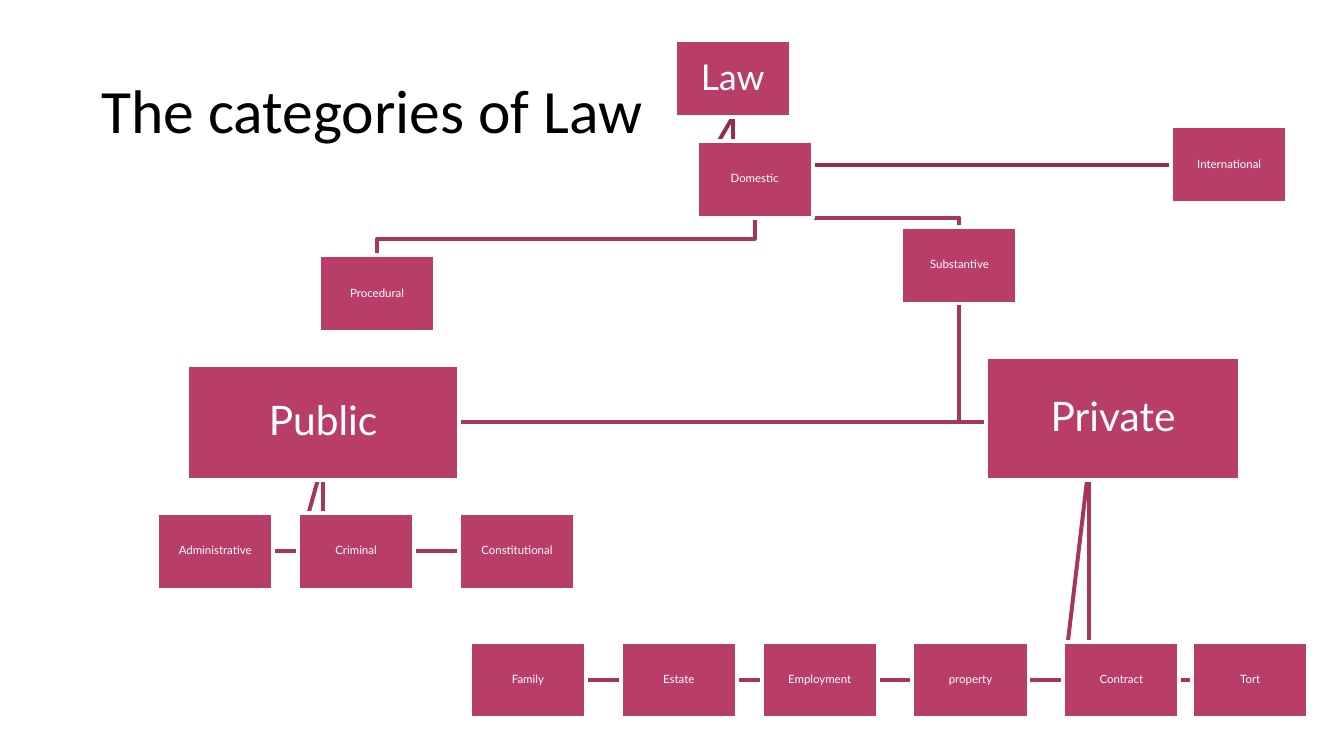
from dataclasses import dataclass

from lxml import etree
from pptx import Presentation
from pptx.dml.color import RGBColor
from pptx.enum.shapes import MSO_CONNECTOR, MSO_SHAPE
from pptx.enum.text import MSO_ANCHOR, PP_ALIGN
from pptx.oxml.ns import qn
from pptx.util import Pt

STRAIGHT = MSO_CONNECTOR.STRAIGHT
RECTANGLE = MSO_SHAPE.RECTANGLE
MIDDLE = MSO_ANCHOR.MIDDLE
CENTER = PP_ALIGN.CENTER
BOTTOM_SITE, LEFT_SITE = 2, 1
BLANK_LAYOUT = 6


@dataclass(frozen=True)
class Theme:
    title_font: str = "Calibri"
    box_font: str = "Lato"
    title_color: RGBColor = RGBColor(0, 0, 0)
    box_fill: RGBColor = RGBColor(0xB8, 0x3D, 0x68)
    box_text: RGBColor = RGBColor(0xFF, 0xFF, 0xFF)
    root_link: RGBColor = RGBColor(0x92, 0x2F, 0x51)
    link: RGBColor = RGBColor(0xA6, 0x36, 0x5E)
    title_size: float = 48.5
    root_size: float = 28
    branch_size: float = 32
    leaf_size: float = 9
    line_width: float = 3.15
    line_spacing: float = 0.9


@dataclass(frozen=True)
class Box:
    left: float
    top: float
    width: float = 91.4
    height: float = 60.5

    @property
    def right(self):
        return self.left + self.width

    @property
    def bottom(self):
        return self.top + self.height

    @property
    def center_x(self):
        return self.left + self.width / 2

    @property
    def center_y(self):
        return self.top + self.height / 2


THEME = Theme()
SLIDE = Box(0, 0, 1058.4, 595.44)
TITLE = Box(72.7, 31.7, 913, 115.2)
ROOT = "Law"
LINK_DROP = 13

SUBJECTS_TOP, PUBLIC_TOP = 505.4, 403.9
CELLS = {
    ROOT: Box(531.4, 31.7),
    "Domestic": Box(548.6, 110.9),
    "Procedural": Box(251.3, 200.9),
    "Substantive": Box(709.9, 178.6),
    "Public": Box(208.8, 302.4),
    "Constitutional": Box(361.4, PUBLIC_TOP),
    "Criminal": Box(234.7, PUBLIC_TOP),
    "Administrative": Box(123.8, PUBLIC_TOP),
    "Private": Box(812.2, 302.4),
    "Family": Box(370.1, SUBJECTS_TOP),
    "Estate": Box(488.9, SUBJECTS_TOP),
    "Employment": Box(599.8, SUBJECTS_TOP),
    "property": Box(718.6, SUBJECTS_TOP),
    "Contract": Box(837.4, SUBJECTS_TOP),
    "Tort": Box(938.9, SUBJECTS_TOP),
    "International": Box(922.3, 99.4),
}
# Branches drawn larger than the cell their links are measured from.
ENLARGED = {
    "Public": Box(147.4, 287.3, 214.2, 90.7),
    "Private": Box(776.9, 280.8, 199.4, 97.2),
}
SIDE_CHILDREN = {
    ROOT: ["International", "Domestic"],
    "Substantive": ["Private", "Public"],
    "Public": ["Administrative", "Criminal", "Constitutional"],
    "Private": ["Tort", "Contract", "property", "Employment", "Estate", "Family"],
}
TOP_CHILDREN = {"Domestic": ["Substantive", "Procedural"]}


def set_text(shape, text, font, size, color):
    frame = shape.text_frame
    frame.word_wrap = True
    frame.vertical_anchor = MIDDLE
    frame.text = text
    paragraph = frame.paragraphs[0]
    paragraph.line_spacing = THEME.line_spacing
    style = paragraph.runs[0].font
    style.name, style.size = font, Pt(size)
    style.color.rgb = color
    return paragraph


def add_title(slide, box, text):
    title = slide.shapes.add_textbox(
        Pt(box.left), Pt(box.top), Pt(box.width), Pt(box.height))
    set_text(title, text, THEME.title_font, THEME.title_size, THEME.title_color)


def add_category(slide, box, name):
    category = slide.shapes.add_shape(
        RECTANGLE, Pt(box.left), Pt(box.top), Pt(box.width), Pt(box.height))
    category.shadow.inherit = False
    category.fill.solid()
    category.fill.fore_color.rgb = THEME.box_fill
    category.line.color.rgb = THEME.box_text
    category.line.width = Pt(THEME.line_width)
    size = THEME.branch_size if name in ENLARGED else THEME.leaf_size
    if name == ROOT:
        size = THEME.root_size
    paragraph = set_text(category, name, THEME.box_font, size, THEME.box_text)
    paragraph.alignment = CENTER
    paragraph.space_after = Pt(4)
    frame = category.text_frame
    frame.margin_left = frame.margin_right = Pt(0.7)
    frame.margin_top = frame.margin_bottom = Pt(0.7)
    return category


def side_route(parent, child):
    """Go down from the parent, then across to the child's nearer side."""
    start = (parent.center_x, parent.bottom)
    to_right = child.center_x > parent.center_x
    end = (child.left if to_right else child.right, child.center_y)
    if child.left < parent.center_x < child.right:
        return [start, end]
    return [start, (parent.center_x, child.center_y), end]


def top_route(parent, child):
    """Go down from the parent, across, then down to the child's top."""
    turn = max(parent.bottom, child.top - LINK_DROP)
    points = [(parent.center_x, parent.bottom), (parent.center_x, turn),
              (child.center_x, turn), (child.center_x, child.top)]
    return list(dict.fromkeys(points))


def add_link(slide, categories, parent, child, route):
    points = [(Pt(x), Pt(y)) for x, y in route(CELLS[parent], CELLS[child])]
    if len(points) == 2:
        link = slide.shapes.add_connector(STRAIGHT, *points[0], *points[1])
        if parent not in ENLARGED:
            link.begin_connect(categories[parent], BOTTOM_SITE)
        link.end_connect(categories[child], LEFT_SITE)
        etree.SubElement(link._element.spPr, qn("a:effectLst"))
    else:
        builder = slide.shapes.build_freeform(*points[0])
        builder.add_line_segments(points[1:], close=False)
        link = builder.convert_to_shape()
        link.fill.background()
        link.shadow.inherit = False
    link.line.color.rgb = THEME.root_link if parent == ROOT else THEME.link
    link.line.width = Pt(THEME.line_width)
    categories[ROOT]._element.addprevious(link._element)


def add_tree(slide):
    categories = {name: add_category(slide, ENLARGED.get(name, cell), name)
                  for name, cell in CELLS.items()}
    for children_of, route in ((SIDE_CHILDREN, side_route), (TOP_CHILDREN, top_route)):
        for parent, children in children_of.items():
            for child in children:
                add_link(slide, categories, parent, child, route)


def main():
    deck = Presentation()
    deck.slide_width, deck.slide_height = Pt(SLIDE.width), Pt(SLIDE.height)
    slide = deck.slides.add_slide(deck.slide_layouts[BLANK_LAYOUT])
    add_title(slide, TITLE, "The categories of Law")
    add_tree(slide)
    deck.save("out.pptx")


if __name__ == "__main__":
    main()
